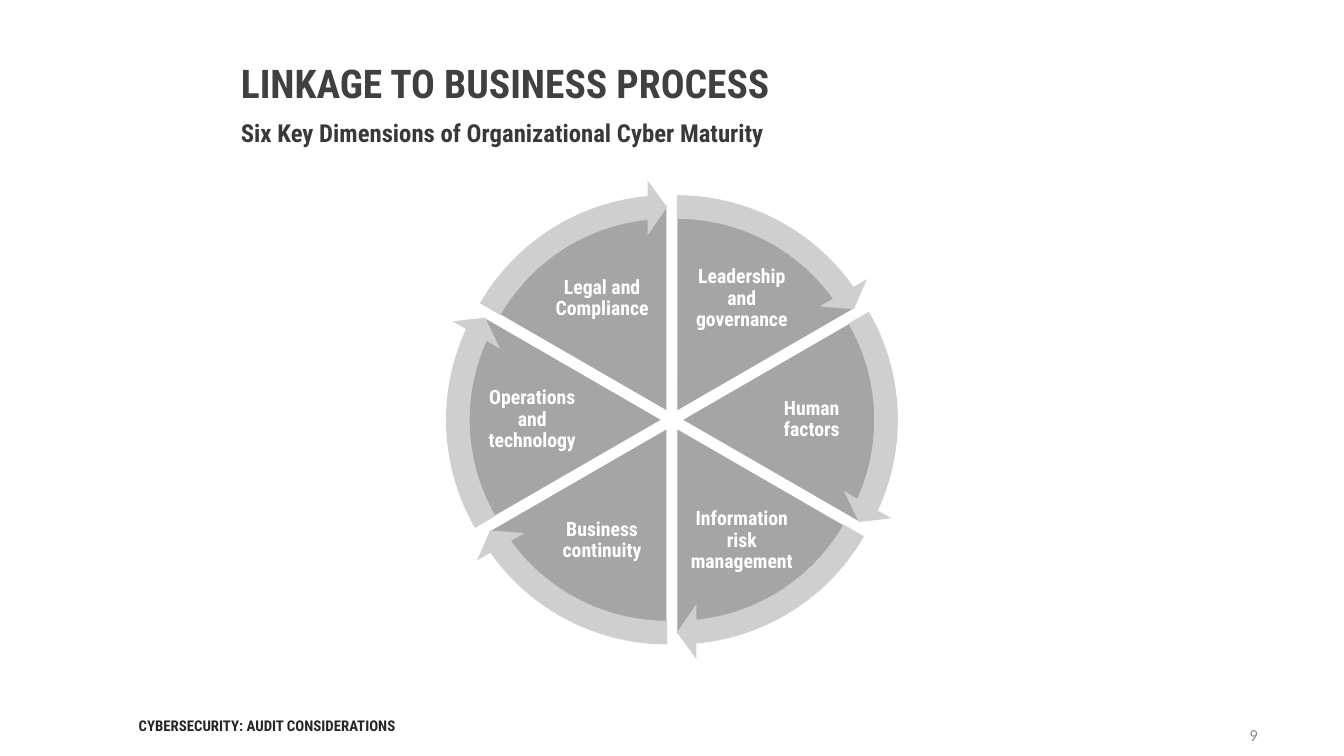
"""Build the slide on six dimensions of cyber maturity as a wheel."""
import math

import pptx
import pptx.dml.color
import pptx.enum.shapes
import pptx.enum.text
import pptx.util

Cm, Pt = pptx.util.Cm, pptx.util.Pt
RGB = pptx.dml.color.RGBColor.from_string
SHAPE = pptx.enum.shapes.MSO_SHAPE
ALIGN = pptx.enum.text.PP_ALIGN
ANCHOR = pptx.enum.text.MSO_ANCHOR

SIZE = (38.38, 21.59)
DIMS = [
    "Leadership and governance",
    "Human factors",
    "Information risk management",
    "Business continuity",
    "Operations and technology",
    "Legal and Compliance",
]
HEADS = [
    ("LINKAGE TO BUSINESS PROCESS", (6.63, 1.55, 28.3, 1.63), "title", {}, {}),
    ("Six Key Dimensions of Organizational Cyber Maturity",
     (6.63, 3.23, 17.96, 1.12), "sub", {}, {}),
    ("CYBERSECURITY: AUDIT CONSIDERATIONS", (3.71, 20.14, 8.64, 1.14), "foot",
     {"vertical_anchor": ANCHOR.MIDDLE}, {}),
    ("9", (27.53, 20.42, 8.64, 1.14), "page",
     {"vertical_anchor": ANCHOR.MIDDLE}, {"alignment": ALIGN.RIGHT}),
]
THEME = {
    "pie": "A5A5A5",
    "ring": "CFCFCF",
    "edge": "FFFFFF",
    "title": ("Roboto Condensed", 32, True, "404040"),
    "sub": ("Roboto Condensed", 20, True, "3B3838"),
    "foot": ("Roboto Condensed", 12, True, "262626"),
    "page": ("Calibri", 13.6, False, "8C8C8C"),
    "label": ("Roboto Condensed", 16, True, "FFFFFF"),
}

HUB = (19.19, 11.99)
GAP = 0.28
PIE = 11.79
RING = 13.23
REACH = 3.99
LABEL = (3.15, 2.36)
TURN = 216
STEP = TURN / len(DIMS)
START = 162
HEAD = 3.275
INSET = Cm(0.05)
FRAME = {
    "vertical_anchor": ANCHOR.MIDDLE,
    "margin_left": INSET,
    "margin_right": INSET,
    "margin_top": INSET,
    "margin_bottom": INSET,
}
PARA = {"alignment": ALIGN.CENTER, "line_spacing": 0.9}


def apply(item, vals):
    for name, val in vals.items():
        setattr(item, name, val)


def place(angle, reach, wide, high):
    x = HUB[0] + reach * math.cos(angle)
    y = HUB[1] + reach * math.sin(angle)
    return x - wide / 2, y - high / 2, wide, high


def write(slide, text, area, style, frame, para):
    face, size, bold, color = THEME[style]
    body = slide.shapes.add_textbox(*map(Cm, area)).text_frame
    apply(body, {"word_wrap": True, **frame})
    line = body.paragraphs[0]
    line.text = text
    apply(line, para)
    apply(line.font, {"name": face, "size": Pt(size), "bold": bold})
    line.font.color.rgb = RGB(color)


def draw(slide, kind, area, fill, turns):
    shape = slide.shapes.add_shape(kind, *map(Cm, area))
    shape.shadow.inherit = False
    shape.fill.solid()
    shape.fill.fore_color.rgb = RGB(THEME[fill])
    for spot, val in enumerate(turns):
        shape.adjustments[spot] = val
    return shape


def main():
    deck = pptx.Presentation()
    apply(deck, {"slide_width": Cm(SIZE[0]), "slide_height": Cm(SIZE[1])})
    slide = deck.slides.add_slide(deck.slide_layouts[6])
    for head in HEADS:
        write(slide, *head)

    parts = []
    for spot, name in enumerate(DIMS):
        angle = math.radians(60 * spot - 60)
        start = (START + spot * STEP) % TURN
        parts.append((name, angle, start, (start + STEP) % TURN))

    for name, angle, start, end in parts:
        pie = draw(slide, SHAPE.PIE, place(angle, GAP, PIE, PIE), "pie", (start, end))
        pie.line.color.rgb = RGB(THEME["edge"])
        pie.line.width = Pt(1)
        write(slide, name, place(angle, REACH, *LABEL), "label", FRAME, PARA)

    for name, angle, start, end in parts:
        turns = (0.051, HEAD, (end - HEAD) % TURN, start, 0.059)
        ring = draw(slide, SHAPE.CIRCULAR_ARROW, place(angle, GAP, RING, RING), "ring", turns)
        ring.line.fill.background()

    deck.save("out.pptx")


if __name__ == "__main__":
    main()
